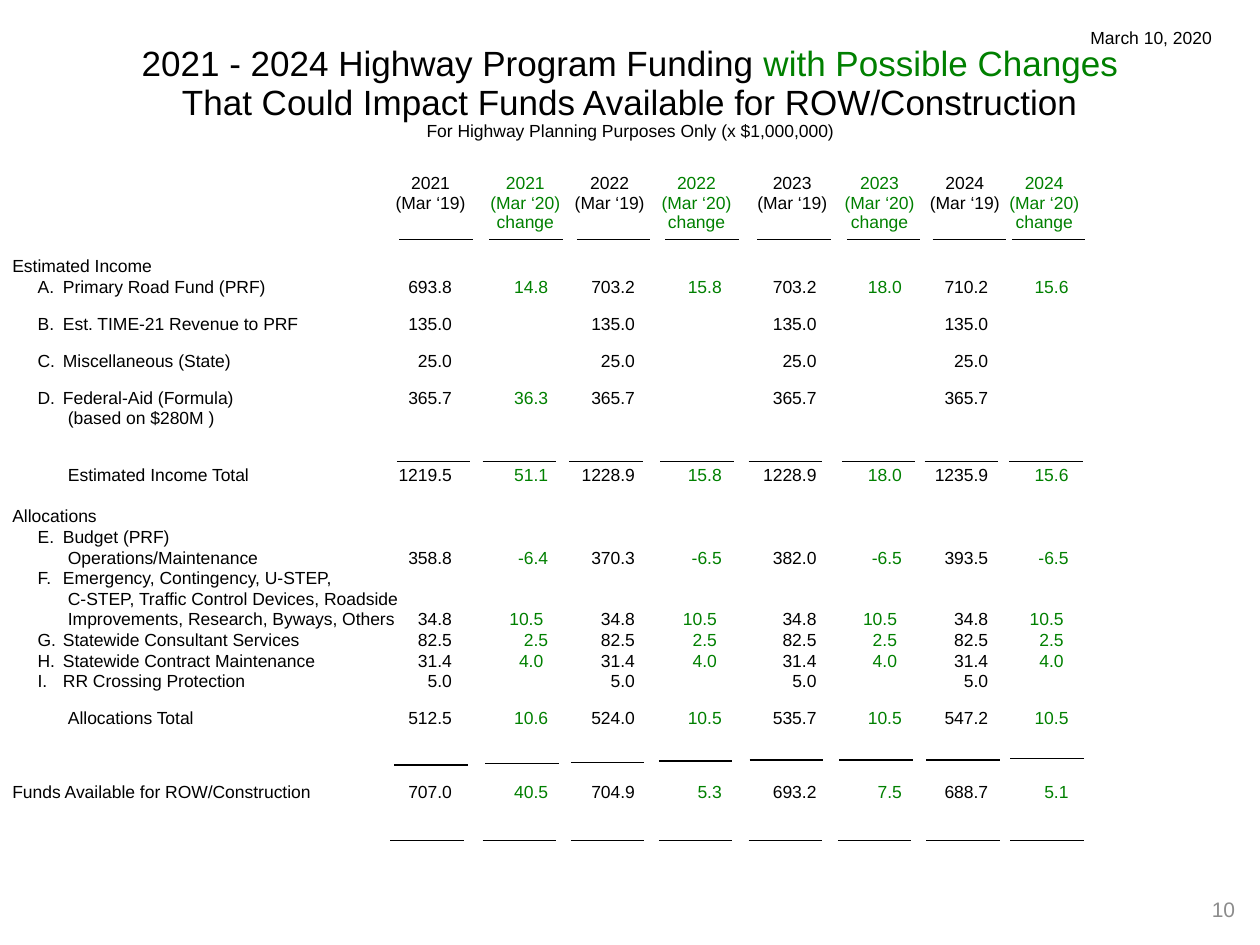
"""Build the 2021 - 2024 highway program funding slide."""
from lxml import etree
from pptx import Presentation, util as u
from pptx.dml.color import RGBColor
from pptx.enum import shapes, text
from pptx.oxml.ns import qn

COLORS = {"base": "000000", "change": "008000", "number": "8C8C8C"}
FONT = "Arial"

TITLE = [
    (20, [("2021 - 2024 Highway Program Funding ", "base"), ("with Possible Changes", "change")]),
    (20, [("That Could Impact Funds Available for ROW/Construction", "base")]),
    (10, [("For Highway Planning Purposes Only (x $1,000,000)", "base")]),
]
YEARS = ["2021", "2022", "2023", "2024"]
HEADINGS = [
    [year for year in YEARS for _ in range(2)],
    ["(Mar ‘19)", "(Mar ‘20)"] * 4,
    ["", "change"] * 4,
]

SMALL_GAP, LINE_GAP = 9.35, 11.55
INDENT = "\t\t\t"
BUDGET = [
    (0, "Estimated Income", []),
    (0, "\tA.\tPrimary Road Fund (PRF)",
     ["693.8", "14.8", "703.2", "15.8", "703.2", "18.0", "710.2", "15.6"]),
    (SMALL_GAP, "\tB.\tEst. TIME-21 Revenue to PRF", ["135.0", ""] * 4),
    (SMALL_GAP, "\tC.\tMiscellaneous (State)", ["25.0", ""] * 4),
    (SMALL_GAP, "\tD.\tFederal-Aid (Formula)",
     ["365.7", "36.3", "365.7", "", "365.7", "", "365.7", ""]),
    (0, INDENT + "(based on $280M )", []),
    (SMALL_GAP + LINE_GAP, INDENT + "Estimated Income Total",
     ["1219.5", "51.1", "1228.9", "15.8", "1228.9", "18.0", "1235.9", "15.6"]),
    (LINE_GAP, "Allocations", []),
    (0, "\tE.\tBudget (PRF)", []),
    (0, INDENT + "Operations/Maintenance",
     ["358.8", "-6.4", "370.3", "-6.5", "382.0", "-6.5", "393.5", "-6.5"]),
    (0, "\tF.\tEmergency, Contingency, U-STEP,", []),
    (0, INDENT + "C-STEP, Traffic Control Devices, Roadside", []),
    (0, INDENT + "Improvements, Research, Byways, Others", ["34.8", "10.5 "] * 4),
    (0, "\tG.\tStatewide Consultant Services", ["82.5", "2.5"] + ["82.5", "2.5 "] * 3),
    (0, "\tH.\tStatewide Contract Maintenance", ["31.4", "4.0 "] * 4),
    (0, "\tI.\tRR Crossing Protection", ["5.0", ""] * 4),
    (SMALL_GAP, INDENT + "Allocations Total",
     ["512.5", "10.6", "524.0", "10.5", "535.7", "10.5", "547.2", "10.5"]),
    (2 * SMALL_GAP + LINE_GAP, "Funds Available for ROW/Construction",
     ["707.0", "40.5", "704.9", "5.3", "693.2", "7.5", "688.7", "5.1"]),
]

HEADING_TABS = [(x, "ctr") for x in (8.43, 10.34, 12.04, 13.79, 15.72, 17.48, 19.2, 20.8)]
BUDGET_TABS = [(x, "l") for x in (0.51, 1.02, 1.12)] + [
    (x, "r") for x in (8.86, 10.8, 12.55, 14.3, 16.21, 17.93, 19.67, 21.29)]

RULE_LENGTH = 1.48
RULES = [
    ([8.05, 9.86, 11.63, 13.41, 15.27, 17.07, 18.8, 20.4], [4.83] * 8),
    ([8, 9.73, 11.48, 13.31, 15.09, 16.97, 18.64, 20.35], [9.3] * 8),
    ([7.95, 9.78, 11.51, 13.28, 15.11, 16.92, 18.67, 20.37],
     [15.42, 15.39, 15.37, 15.34, 15.32, 15.32, 15.32, 15.29]),
    ([7.87, 9.73, 11.51, 13.28, 15.09, 16.89, 18.67, 20.37], [16.94] * 8),
]


def column_runs(values):
    """Return tabbed runs, with every second column in the change colour."""
    last = max((i for i, value in enumerate(values) if value), default=-1)
    return [("\t" + value, ("base", "change")[i % 2])
            for i, value in enumerate(values[:last + 1])]


def add_block(slide, place, lines, align=text.PP_ALIGN.LEFT, spacing=None, tabs=(), wrap=True):
    """Add a text box of (size, gap, runs) lines and return its frame."""
    frame = slide.shapes.add_textbox(*map(u.Cm, place)).text_frame
    frame.word_wrap = wrap
    for i, (size, gap, runs) in enumerate(lines):
        line = frame.add_paragraph() if i else frame.paragraphs[0]
        line.alignment = align
        if spacing:
            line.line_spacing = spacing
            line.space_before = u.Pt(size * 0.52 + gap)
        if tabs:
            stops = etree.SubElement(line._p.get_or_add_pPr(), qn("a:tabLst"))
            for position, side in tabs:
                etree.SubElement(stops, qn("a:tab"), pos=str(int(u.Cm(position))), algn=side)
        for words, color in runs:
            run = line.add_run()
            run.text = words
            run.font.size = u.Pt(size)
            run.font.name = FONT
            run.font.color.rgb = RGBColor.from_string(COLORS[color])
    return frame


def add_rule(slide, x, y):
    """Draw one thin horizontal rule over a column."""
    rule = slide.shapes.add_connector(
        shapes.MSO_CONNECTOR.STRAIGHT, u.Cm(x), u.Cm(y), u.Cm(x + RULE_LENGTH), u.Cm(y))
    rule.line.color.rgb = RGBColor.from_string(COLORS["base"])
    rule.line.width = u.Pt(0.75)
    etree.SubElement(rule._element.spPr, qn("a:effectLst"))


def main():
    """Assemble and save the slide."""
    deck = Presentation()
    deck.slide_width, deck.slide_height = u.Cm(25.4), u.Cm(19.05)
    slide = deck.slides.add_slide(deck.slide_layouts[6])
    center, right = text.PP_ALIGN.CENTER, text.PP_ALIGN.RIGHT

    add_block(slide, (0, 5.18, 25.4, 13.59),
              [(10, gap, [(label, "base")] + column_runs(values)) for gap, label, values in BUDGET],
              spacing=0.55, tabs=BUDGET_TABS)
    add_block(slide, (0, 3.53, 25.4, 1.4),
              [(10, 0, column_runs(headings)) for headings in HEADINGS],
              spacing=0.5, tabs=HEADING_TABS)
    add_block(slide, (0, 1.07, 25.4, 2.01),
              [(size, 0, runs) for size, runs in TITLE], center, spacing=0.5)
    for starts, heights in RULES:
        for x, y in zip(starts, heights):
            add_rule(slide, x, y)
    add_block(slide, (21.72, 0.43, 2.97, 0.69),
              [(10, 0, [("March 10, 2020", "base")])], center, wrap=False)
    page = add_block(slide, (19.23, 17.81, 5.92, 1.02), [(12, 0, [("10", "number")])], right)
    page.vertical_anchor = text.MSO_ANCHOR.MIDDLE

    deck.save("out.pptx")


if __name__ == "__main__":
    main()
